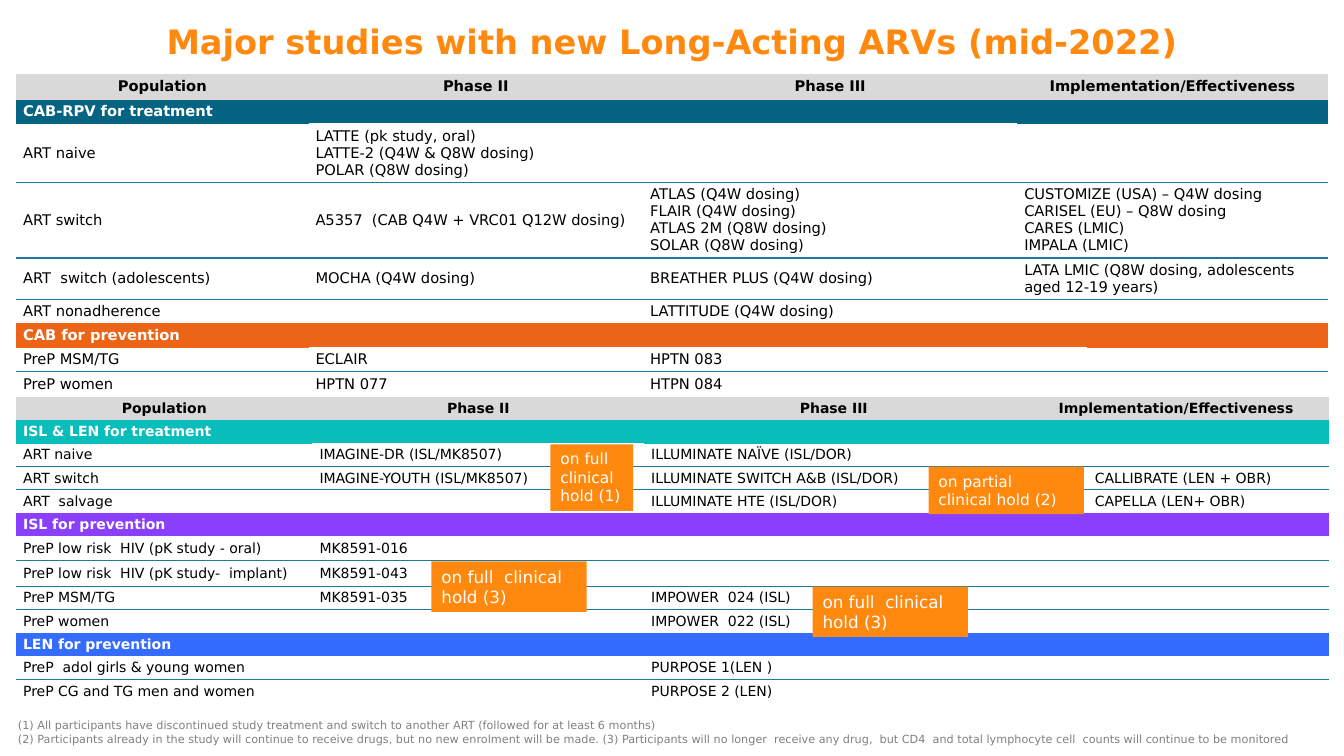
import dataclasses

import lxml.etree
import pptx
import pptx.dml.color
import pptx.enum.shapes
import pptx.enum.text
import pptx.oxml.ns
import pptx.util

Inches = pptx.util.Inches
Pt = pptx.util.Pt
ALIGN = pptx.enum.text.PP_ALIGN
ANCHOR = pptx.enum.text.MSO_ANCHOR
qn = pptx.oxml.ns.qn


@dataclasses.dataclass(frozen=True)
class Theme:
    font: str = "DejaVu Sans"
    black: str = "000000"
    white: str = "FFFFFF"
    gray: str = "808080"
    silver: str = "D9D9D9"
    orange: str = "FF890E"
    line: str = "1D7A9A"
    navy: str = "076382"
    rust: str = "EC6415"
    teal: str = "08BDBA"
    purple: str = "8A3FFC"
    blue: str = "346CFF"
    title: float = 24
    upper: float = 10.5
    lower: float = 10
    note: float = 8
    small: float = 11
    large: float = 12


THEME = Theme()
HEADS = ["Population", "Phase II", "Phase III", "Implementation/Effectiveness"]

UPPER = [
    ("CAB-RPV for treatment", THEME.navy, (1, 1, 1, 2), (1, 2), [
        (0.58, "ART naive",
         "LATTE (pk study, oral)\nLATTE-2 (Q4W & Q8W dosing)\nPOLAR (Q8W dosing)", "", ""),
        (0.75, "ART switch", "A5357  (CAB Q4W + VRC01 Q12W dosing)",
         "ATLAS (Q4W dosing)\nFLAIR (Q4W dosing)\nATLAS 2M (Q8W dosing)\nSOLAR (Q8W dosing)",
         "CUSTOMIZE (USA) – Q4W dosing\nCARISEL (EU) – Q8W dosing\nCARES (LMIC)\nIMPALA (LMIC)"),
        (0.41, "ART  switch (adolescents)", "MOCHA (Q4W dosing)", "BREATHER PLUS (Q4W dosing)",
         "LATA LMIC (Q8W dosing, adolescents aged 12-19 years)"),
        (0.24, "ART nonadherence", "", "LATTITUDE (Q4W dosing)", ""),
    ]),
    ("CAB for prevention", THEME.rust, (1, 1, 2, 1), (1, 2), [
        (0.24, "PreP MSM/TG", "ECLAIR", "HPTN 083", ""),
        (0.25, "PreP women", "HPTN 077", "HTPN 084", ""),
    ]),
]

LOWER = [
    ("ISL & LEN for treatment", THEME.teal, (2, 1, 2, 1), (1,), [
        (0.23, "ART naive", "IMAGINE-DR (ISL/MK8507)", "ILLUMINATE NAÏVE (ISL/DOR)", ""),
        (0.23, "ART switch", "IMAGINE-YOUTH (ISL/MK8507)",
         "ILLUMINATE SWITCH A&B (ISL/DOR)", "CALLIBRATE (LEN + OBR)"),
        (0.23, "ART  salvage", "", "ILLUMINATE HTE (ISL/DOR)", "CAPELLA (LEN+ OBR)"),
    ]),
    ("ISL for prevention", THEME.purple, (2, 1, 2, 1), (1,), [
        (0.24, "PreP low risk  HIV (pK study - oral)", "MK8591-016", "", ""),
        (0.26, "PreP low risk  HIV (pK study-  implant)", "MK8591-043", "", ""),
        (0.23, "PreP MSM/TG", "MK8591-035", "IMPOWER  024 (ISL)", ""),
        (0.23, "PreP women", "", "IMPOWER  022 (ISL)", ""),
    ]),
    ("LEN for prevention", THEME.blue, (1, 2, 2, 1), (), [
        (0.23, "PreP  adol girls & young women", "", "PURPOSE 1(LEN )", ""),
        (0.24, "PreP CG and TG men and women", "", "PURPOSE 2 (LEN)", ""),
    ]),
]

NOTES = (
    "(1) All participants have discontinued study treatment and switch to another ART"
    " (followed for at least 6 months)\n"
    "(2) Participants already in the study will continue to receive drugs, but no new"
    " enrolment will be made. (3) Participants will no longer  receive any drug,  but CD4"
    "  and total lymphocyte cell  counts will continue to be monitored"
)

HOLDS = [
    (9.21, 4.63, 1.54, 0.47, "on partial  clinical hold (2)", THEME.small),
    (5.46, 4.41, 0.82, 0.66, "on full  clinical hold (1)", THEME.small),
    (8.06, 5.82, 1.54, 0.5, "on full  clinical hold (3)", THEME.large),
    (4.28, 5.57, 1.54, 0.5, "on full  clinical hold (3)", THEME.large),
]


def paint(fill, color):
    fill.solid()
    fill.fore_color.rgb = pptx.dml.color.RGBColor.from_string(color)


def write(frame, text, size, color=THEME.black, bold=False, align=ALIGN.LEFT, space=None):
    frame.word_wrap = True
    for index, line in enumerate(text.split("\n")):
        para = frame.add_paragraph() if index else frame.paragraphs[0]
        para.alignment = align
        para.line_spacing = space
        if not line:
            lxml.etree.SubElement(para._p, qn("a:endParaRPr"), sz=str(int(size * 100)))
            continue
        run = para.add_run()
        run.text = line
        run.font.name = THEME.font
        run.font.size = Pt(size)
        run.font.bold = bold
        run.font.color.rgb = pptx.dml.color.RGBColor.from_string(color)


def rule(cell, top, base):
    props = cell._tc.get_or_add_tcPr()
    edges = [("a:lnL", None), ("a:lnR", None), ("a:lnT", top), ("a:lnB", base)]
    for index, (tag, color) in enumerate(edges):
        edge = lxml.etree.Element(qn(tag), w=str(Pt(1)))
        if color:
            fill = lxml.etree.SubElement(edge, qn("a:solidFill"))
            lxml.etree.SubElement(fill, qn("a:srgbClr"), val=color)
        else:
            lxml.etree.SubElement(edge, qn("a:noFill"))
        props.insert(index, edge)


class Page:
    def __init__(self, deck, theme):
        self.theme = theme
        self.slide = deck.slides.add_slide(deck.slide_layouts[5])

    def title(self, text, *place):
        shape = self.slide.shapes.title
        shape.left, shape.top, shape.width, shape.height = map(Inches, place)
        frame = shape.text_frame
        frame.margin_left = frame.margin_right = frame.margin_top = frame.margin_bottom = 0
        frame.vertical_anchor = ANCHOR.TOP
        write(frame, text, self.theme.title, self.theme.orange, True, ALIGN.CENTER, 0.9)

    def note(self, text, *place):
        box = self.slide.shapes.add_textbox(*map(Inches, place))
        write(box.text_frame, text, self.theme.note, self.theme.gray)

    def hold(self, left, top, width, height, text, size):
        box = self.slide.shapes.add_shape(
            pptx.enum.shapes.MSO_SHAPE.RECTANGLE, *map(Inches, (left, top, width, height)))
        box.shadow.inherit = False
        paint(box.fill, self.theme.orange)
        box.line.fill.background()
        box.text_frame.vertical_anchor = ANCHOR.TOP
        write(box.text_frame, text, size, self.theme.white)

    def row(self, grid, index, texts, spans, fill, tops, base, **style):
        start = 0
        for text, span, top in zip(texts, spans, tops):
            cells = [grid.cell(index, start + step) for step in range(span)]
            if span > 1:
                cells[0].merge(cells[-1])
            for cell in cells:
                cell.margin_left = cell.margin_right = Inches(0.07)
                cell.margin_top = cell.margin_bottom = Inches(0.03)
                cell.vertical_anchor = ANCHOR.MIDDLE
                paint(cell.fill, fill)
                rule(cell, top, base)
                write(cell.text_frame, text if cell is cells[0] else "", **style)
            start += span

    def table(self, left, top, widths, heads, head_spans, bands, size):
        theme = self.theme
        highs = [heads[0]]
        for band in bands:
            highs += [heads[1]] + [row[0] for row in band[4]]
        frame = self.slide.shapes.add_table(
            len(highs), len(widths), Inches(left), Inches(top),
            Inches(sum(widths)), Inches(sum(highs)))
        grid = frame.table
        grid.first_row = grid.horz_banding = False
        grid._tbl.tblPr.find(qn("a:tableStyleId")).text = "{2D5ABB26-0587-4C30-8999-92F81FD0307C}"
        for column, width in zip(grid.columns, widths):
            column.width = Inches(width)
        for line, high in zip(grid.rows, highs):
            line.height = Inches(high)
        blank = [None] * 4
        self.row(grid, 0, HEADS, head_spans, theme.silver, blank, None,
                 size=size, bold=True, align=ALIGN.CENTER)
        index = 1
        for name, color, spans, whites, rows in bands:
            self.row(grid, index, [name], [len(widths)], color, blank, None,
                     size=size, color=theme.white, bold=True)
            tops = [theme.white if col in whites else None for col in range(4)]
            for count, (_, *texts) in enumerate(rows, 1):
                base = theme.line if count < len(rows) else None
                self.row(grid, index + count, texts, spans, theme.white, tops, base, size=size)
                tops = [theme.line] * 4
            index += len(rows) + 1


def main():
    deck = pptx.Presentation()
    deck.slide_width, deck.slide_height = Inches(13.33), Inches(7.5)
    page = Page(deck, THEME)
    page.title("Major studies with new Long-Acting ARVs (mid-2022)", 0.16, 0.25, 13.01, 1.34)
    page.table(0.16, 0.73, (2.9, 3.32, 3.71, 0.69, 2.39), (0.26, 0.24), (1, 1, 1, 2),
               UPPER, THEME.upper)
    page.table(0.16, 3.94, (2.47, 0.47, 3.29, 3.76, 0.64, 2.39), (0.23, 0.23), (2, 1, 1, 2),
               LOWER, THEME.lower)
    page.note(NOTES, 0.08, 7.08, 13.44, 0.37)
    for hold in HOLDS:
        page.hold(*hold)
    deck.save("out.pptx")


if __name__ == "__main__":
    main()
